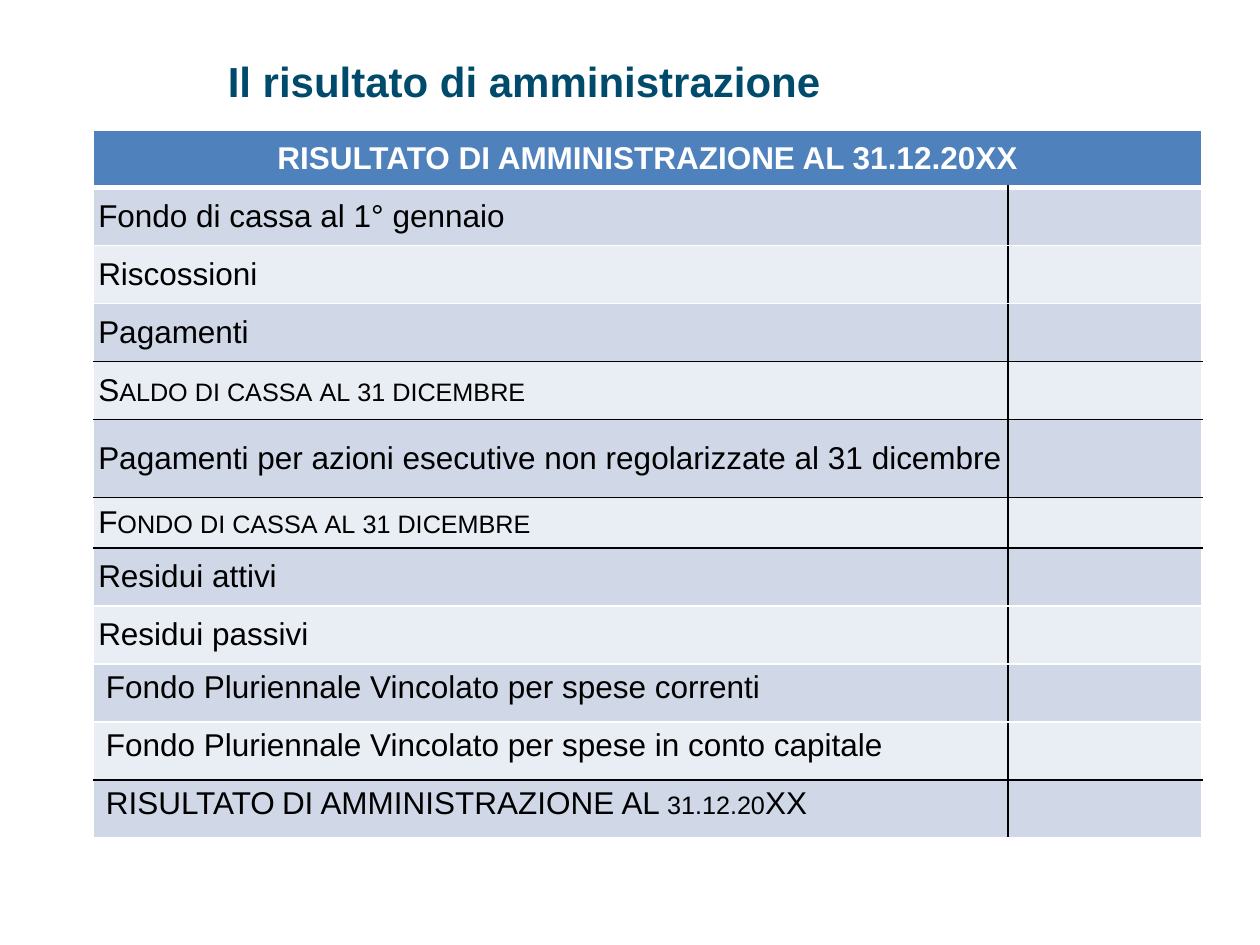
"""Build a slide with the table of the administration result."""
import pptx
import pptx.util
import pptx.dml.color
import pptx.enum.text
import pptx.oxml

Inches = pptx.util.Inches
Pt = pptx.util.Pt
ANCHOR = pptx.enum.text.MSO_ANCHOR
BLACK, WHITE = "000000", "FFFFFF"


def paint(code):
    return pptx.dml.color.RGBColor.from_string(code)


def edge(cell, sides):
    props = cell._tc.get_or_add_tcPr()
    for spot, (side, code, width) in enumerate(sides):
        line = pptx.oxml.parse_xml(
            '<a:ln%s xmlns:a="http://schemas.openxmlformats.org/drawingml/2006/main" w="%d">'
            '<a:solidFill><a:srgbClr val="%s"/></a:solidFill></a:ln%s>'
            % (side, Pt(width), code, side))
        props.insert(spot, line)


deck = pptx.Presentation()
deck.slide_width = Inches(10)
deck.slide_height = Inches(7.5)
slide = deck.slides.add_slide(deck.slide_layouts[6])

title = slide.shapes.add_textbox(Inches(1.71), Inches(0.36), Inches(7.83), Inches(0.62))
title.text_frame.word_wrap = True
para = title.text_frame.paragraphs[0]
para.text = "Il risultato di amministrazione"
para.line_spacing = Pt(31)
para.font.name = "Arial"
para.font.size = Pt(24)
para.font.bold = True
para.font.color.rgb = paint("004B6B")

rows = [
    "RISULTATO DI AMMINISTRAZIONE AL 31.12.20XX",
    "Fondo di cassa al 1° gennaio",
    "Riscossioni",
    "Pagamenti",
    "Saldo di cassa al 31 dicembre",
    "Pagamenti per azioni esecutive non regolarizzate al 31 dicembre",
    "Fondo di cassa al 31 dicembre",
    "Residui attivi",
    "Residui passivi",
    "Fondo Pluriennale Vincolato per spese correnti",
    "Fondo Pluriennale Vincolato per spese in conto capitale",
    "RISULTATO DI AMMINISTRAZIONE AL 31.12.20XX",
]
caps = {4, 6, 11}
ruled = {3, 4, 5, 6, 10}
tall = {5: 0.62, 6: 0.4}

frame = slide.shapes.add_table(len(rows), 2, Inches(0.74), Inches(1.03),
                               Inches(8.8), Inches(5.62))
table = frame.table
table.columns[0].width = Inches(7.26)
table.columns[1].width = Inches(1.54)

for row, label in enumerate(rows):
    table.rows[row].height = Inches(tall.get(row, 0.46))
    head = row == 0
    fill = "4F81BD" if head else "D0D8E8" if row % 2 else "E9EDF4"
    above = BLACK if row - 1 in ruled else WHITE
    below = BLACK if row in ruled else WHITE
    inner = WHITE if head else BLACK
    for col in range(2):
        cell = table.cell(row, col)
        cell.fill.solid()
        cell.fill.fore_color.rgb = paint(fill)
        edge(cell, [("L", inner if col else WHITE, 1),
                    ("R", WHITE if col else inner, 1),
                    ("T", above, 3 if row == 1 else 1),
                    ("B", below, 3 if head else 1)])
    cell = table.cell(row, 0)
    if row < 9:
        cell.vertical_anchor = ANCHOR.MIDDLE
        cell.margin_left = cell.margin_right = Inches(0.04)
        cell.margin_top = cell.margin_bottom = Inches(0.04)
    para = cell.text_frame.paragraphs[0]
    para.text = label
    para.font.name = "Arial"
    para.font.size = Pt(18)
    para.font.bold = head
    para.font.color.rgb = paint(WHITE if head else BLACK)
    if head:
        para.alignment = pptx.enum.text.PP_ALIGN.CENTER
    if row in caps:
        para.runs[0].font._element.set("cap", "small")

table.cell(0, 0).merge(table.cell(0, 1))
deck.save("out.pptx")
